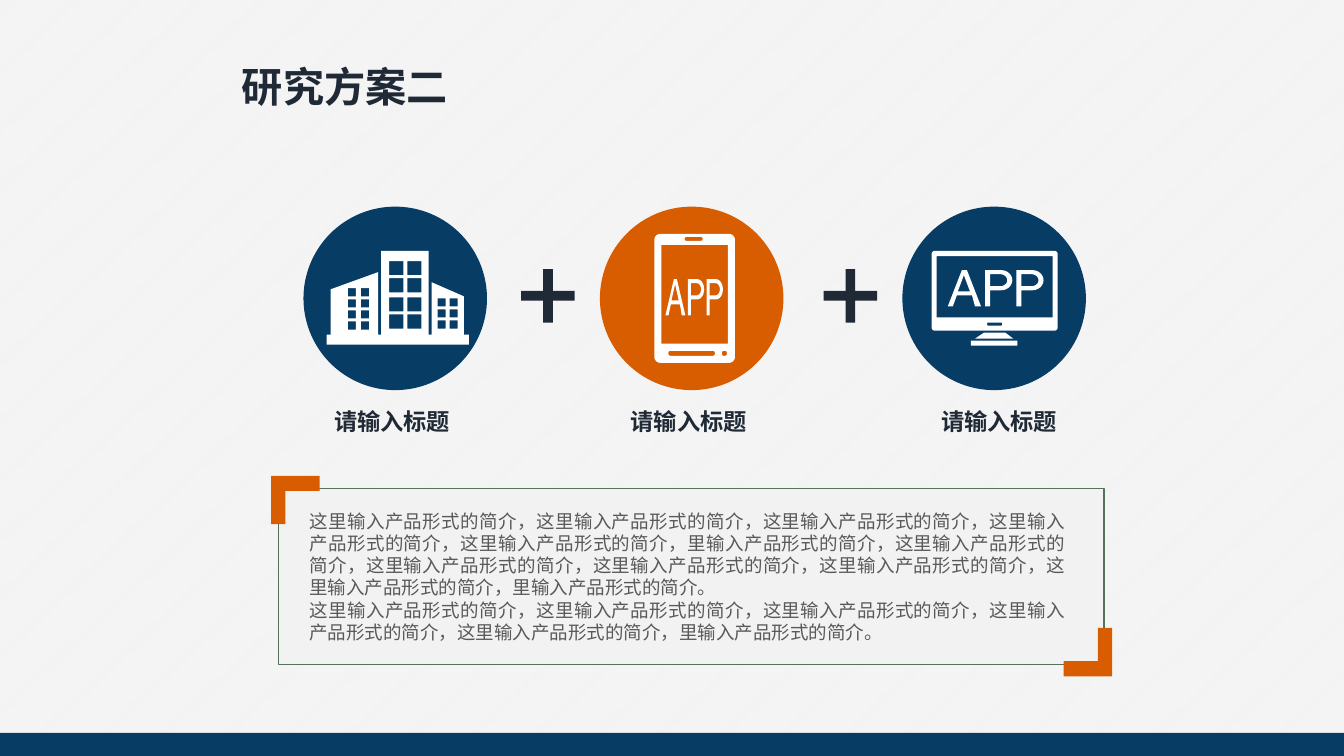
import math
import pptx
import pptx.dml.color
import pptx.enum.dml
import pptx.enum.shapes
import pptx.enum.text
import pptx.oxml
import pptx.oxml.ns
import pptx.util

Inches = pptx.util.Inches
Pt = pptx.util.Pt
RGB = pptx.dml.color.RGBColor.from_string
SHAPE = pptx.enum.shapes.MSO_SHAPE
ALIGN = pptx.enum.text.PP_ALIGN
HUES = {"navy": "073C65", "orange": "D85C00", "ink": "202A36", "grey": "595959",
        "pale": "F2F2F2", "white": "FFFFFF", "green": "55735B"}
CJK = "Noto Sans CJK SC"


def box(left, top, right, bottom, rad=0):
    """Return the outline of a rectangle whose corners are rounded by rad."""
    turns = range(0, 91, 15) if rad else [0]
    ends = [(right - rad, bottom - rad), (left + rad, bottom - rad),
            (left + rad, top + rad), (right - rad, top + rad)]
    return [(x + rad * math.cos(math.radians(90 * n + t)),
             y + rad * math.sin(math.radians(90 * n + t)))
            for n, (x, y) in enumerate(ends) for t in turns]


def style(frame, size, hue, font, bold, align):
    frame.vertical_anchor = pptx.enum.text.MSO_ANCHOR.TOP
    for para in frame.paragraphs:
        para.alignment = align
        for run in para.runs:
            run.font.size = Pt(size)
            run.font.bold = bold
            run.font.name = font
            run.font.color.rgb = RGB(HUES[hue])
            east = pptx.oxml.parse_xml(
                f'<a:ea {pptx.oxml.ns.nsdecls("a")} typeface="{CJK}"/>')
            run.font._element.append(east)


deck = pptx.Presentation()
deck.slide_width = Inches(13.33)
deck.slide_height = Inches(7.5)
slide = deck.slides.add_slide(deck.slide_layouts[5])
back = slide.background.fill
back.patterned()
back.pattern = pptx.enum.dml.MSO_PATTERN.LIGHT_UPWARD_DIAGONAL
back.fore_color.rgb = RGB(HUES["white"])
back.back_color.rgb = RGB(HUES["pale"])

# The word APP, at full width, from the top left corner
word = [[(0.09, 0.25), (0.24, 0.25), (0.27, 0.36), (0.33, 0.36), (0.19, 0),
         (0.14, 0), (0, 0.36), (0.05, 0.36)],
        [(0.22, 0.21), (0.1, 0.21), (0.16, 0.05)]]
arc = [math.radians(a) for a in range(0, 181, 15)]
for left in (0.37, 0.68):
    bowl = [(left + 0.16 + 0.11 * math.sin(a), 0.1 - 0.1 * math.cos(a)) for a in arc]
    hole = [(left + 0.15 + 0.07 * math.sin(a), 0.1 - 0.06 * math.cos(a)) for a in arc]
    word.append([(left, 0), *bowl, (left + 0.05, 0.2), (left + 0.05, 0.36), (left, 0.36)])
    word.append([(left + 0.05, 0.04), *hole, (left + 0.05, 0.16)])

# Each icon is a list of outlines; inner ones are holes
town = [[(4.6, 3.32), (4.6, 2.94), (4.28, 2.8), (4.28, 3.32), (4.25, 3.32),
         (4.25, 2.49), (3.78, 2.49), (3.78, 3.32), (3.75, 3.32), (3.75, 2.7),
         (3.28, 2.87), (3.28, 3.32), (3.24, 3.32), (3.24, 3.42), (4.65, 3.42),
         (4.65, 3.32)]]
# columns, rows, window size
for cols, rows, size in [((3.45, 3.58), (2.86, 2.97, 3.08, 3.19), 0.08),
                         ((3.86, 4.04), (2.59, 2.76, 2.95, 3.12), 0.14),
                         ((4.34, 4.46), (2.96, 3.07, 3.18), 0.08)]:
    town += [box(x, y, x + size, y + size) for x in cols for y in rows]

phone = [box(6.49, 2.32, 7.29, 3.6, 0.06), box(6.79, 2.35, 6.97, 2.39, 0.02),
         box(6.63, 3.48, 7.09, 3.53, 0.02), box(7.16, 3.48, 7.21, 3.53, 0.02),
         box(6.56, 2.43, 7.22, 3.41)]
phone += [[(6.6 + 0.6 * x, 2.77 + y) for x, y in line] for line in word]

screen = [box(9.24, 2.49, 10.49, 3.28, 0.03), box(9.79, 3.2, 9.94, 3.23, 0.01),
          box(9.29, 2.54, 10.44, 3.15), box(9.63, 3.38, 10.09, 3.43),
          [(10.05, 3.36), (9.67, 3.36), (9.76, 3.3), (9.97, 3.3)]]
screen += [[(9.4 + x, 2.68 + y) for x, y in line] for line in word]

for left, hue, icon in [(5.95, "orange", phone), (8.95, "navy", screen),
                        (3.01, "navy", town)]:
    group = slide.shapes.add_group_shape()
    disc = group.shapes.add_shape(SHAPE.OVAL, Inches(left), Inches(2.05),
                                  Inches(1.82), Inches(1.82))
    lines = [[(Inches(x), Inches(y)) for x, y in line] for line in icon]
    pen = group.shapes.build_freeform(*lines[0][0], scale=1.0)
    pen.add_line_segments(lines[0][1:], close=True)
    for line in lines[1:]:
        pen.move_to(*line[0])
        pen.add_line_segments(line[1:], close=True)
    for part, tint in ((disc, hue), (pen.convert_to_shape(), "white")):
        part.shadow.inherit = False
        part.fill.solid()
        part.fill.fore_color.rgb = RGB(HUES[tint])
        part.line.fill.background()

# kind, left, top, width, height, fill
for kind, left, top, wide, high, hue in [
        (SHAPE.CROSS, 5.17, 2.67, 0.53, 0.53, "ink"),
        (SHAPE.CROSS, 8.17, 2.67, 0.53, 0.53, "ink"),
        (SHAPE.RECTANGLE, 2.76, 4.85, 8.19, 1.74, "pale"),
        (SHAPE.RECTANGLE, 0, 7.27, 13.33, 0.23, "navy")]:
    part = slide.shapes.add_shape(kind, Inches(left), Inches(top),
                                  Inches(wide), Inches(high))
    part.shadow.inherit = False
    part.fill.solid()
    part.fill.fore_color.rgb = RGB(HUES[hue])
    if kind == SHAPE.CROSS:
        part.adjustments[0] = 0.41
    if hue == "pale":
        part.line.color.rgb = RGB(HUES["green"])
        part.line.width = Pt(0.75)
    else:
        part.line.fill.background()

# Brackets at opposite corners of the text panel, the second one turned round
angle = [(0, 0), (0.48, 0), (0.48, 0.15), (0.14, 0.15), (0.14, 0.48), (0, 0.48)]
for left, top, sign in [(2.69, 4.72, 1), (11.03, 6.71, -1)]:
    dots = [(Inches(left + sign * x), Inches(top + sign * y)) for x, y in angle]
    pen = slide.shapes.build_freeform(*dots[0], scale=1.0)
    pen.add_line_segments(dots[1:], close=True)
    mark = pen.convert_to_shape()
    mark.shadow.inherit = False
    mark.fill.solid()
    mark.fill.fore_color.rgb = RGB(HUES["orange"])
    mark.line.fill.background()

full = "这里输入产品形式的简介，"
last = "里输入产品形式的简介"
body = f"{full * 5}{last}，{full * 5}{last}。\n{full * 5}{last}。"
label = "请输入标题"
for left, top, wide, high, text, size, hue, bold, align in [
        (2.97, 5.01, 7.69, 1.44, body, 13.2, "grey", False, ALIGN.JUSTIFY),
        (3.14, 3.99, 1.5, 0.38, label, 16.6, "ink", True, ALIGN.CENTER),
        (6.08, 3.99, 1.5, 0.38, label, 16.6, "ink", True, ALIGN.CENTER),
        (9.16, 3.99, 1.5, 0.38, label, 16.6, "ink", True, ALIGN.CENTER)]:
    frame = slide.shapes.add_textbox(Inches(left), Inches(top),
                                     Inches(wide), Inches(high)).text_frame
    frame.word_wrap = True
    frame.text = text
    style(frame, size, hue, CJK, bold, align)

title = slide.shapes.title
title.left, title.top = Inches(2.3), Inches(0.56)
title.width, title.height = Inches(2.26), Inches(0.59)
title.text_frame.text = "研究方案二"
title.text_frame.word_wrap = False
title.text_frame.auto_size = pptx.enum.text.MSO_AUTO_SIZE.NONE
style(title.text_frame, 29.4, "ink", "Arial", True, ALIGN.LEFT)

deck.save("out.pptx")
